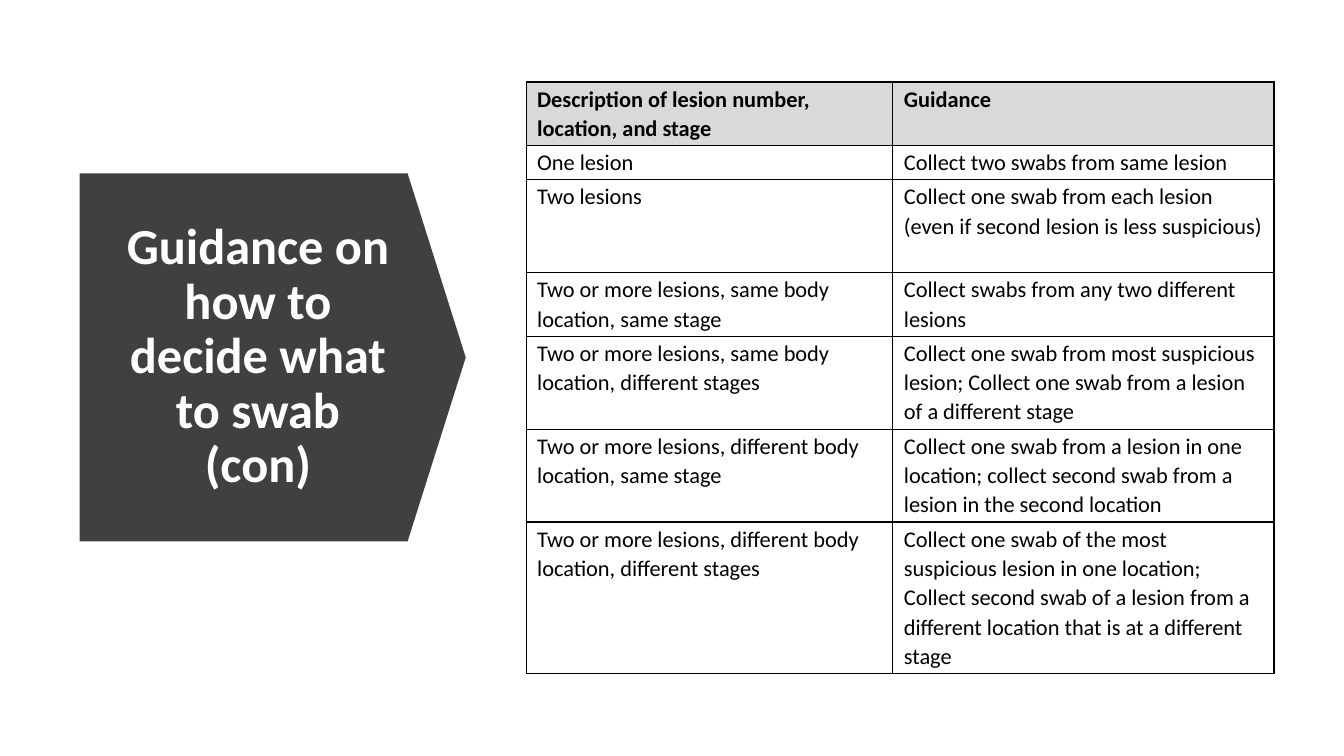
from lxml import etree
from pptx import Presentation
from pptx.dml.color import RGBColor
from pptx.enum.shapes import MSO_SHAPE
from pptx.enum.text import MSO_ANCHOR, PP_ALIGN
from pptx.oxml.ns import qn
from pptx.util import Pt

DOWN_ARROW = MSO_SHAPE.DOWN_ARROW
MIDDLE = MSO_ANCHOR.MIDDLE
LEFT, CENTER = PP_ALIGN.LEFT, PP_ALIGN.CENTER

TITLE = "Guidance on how to decide what to swab (con)"
ROWS = [
    (45.4, "Description of lesion number, location, and stage", "Guidance"),
    (24.4, "One lesion", "Collect two swabs from same lesion"),
    (66.4, "Two lesions",
     "Collect one swab from each lesion (even if second lesion is less suspicious)"),
    (45.4, "Two or more lesions, same body location, same stage",
     "Collect swabs from any two different lesions"),
    (66.4, "Two or more lesions, same body location, different stages",
     "Collect one swab from most suspicious lesion; "
     "Collect one swab from a lesion of a different stage"),
    (66.4, "Two or more lesions, different body location, same stage",
     "Collect one swab from a lesion in one location; "
     "collect second swab from a lesion in the second location"),
    (108, "Two or more lesions, different body location, different stages",
     "Collect one swab of the most suspicious lesion in one location; "
     "Collect second swab of a lesion from a different location "
     "that is at a different stage"),
]
COL_WIDTHS = [262, 272.2]


def rgb(value):
    return RGBColor.from_string(value)


def write(tf, text, size, color="000000", bold=False, align=LEFT, spacing=1.07, after=0):
    tf.word_wrap = True
    p = tf.paragraphs[0]
    p.alignment = align
    p.line_spacing = spacing
    p.space_after = Pt(after)
    r = p.add_run()
    r.text = text
    r.font.name = "Calibri"
    r.font.size = Pt(size)
    r.font.bold = bold
    r.font.color.rgb = rgb(color)


def add_borders(cell, color="000000", width=1):
    tcPr = cell._tc.get_or_add_tcPr()
    for i, side in enumerate(("a:lnL", "a:lnR", "a:lnT", "a:lnB")):
        ln = etree.Element(qn(side), w=str(Pt(width)))
        fill = etree.SubElement(ln, qn("a:solidFill"))
        etree.SubElement(fill, qn("a:srgbClr"), val=color)
        tcPr.insert(i, ln)


prs = Presentation()
prs.slide_width, prs.slide_height = Pt(960), Pt(540)
s = prs.slides.add_slide(prs.slide_layouts[6])

arrow = s.shapes.add_shape(DOWN_ARROW, Pt(63.4), Pt(117.4), Pt(262.8), Pt(275.8))
arrow.rotation = 270
arrow.adjustments[0] = 1
arrow.adjustments[1] = 0.158
arrow.shadow.inherit = False
arrow.fill.solid()
arrow.fill.fore_color.rgb = rgb("404040")
arrow.line.fill.background()

title = s.shapes.add_textbox(Pt(80.6), Pt(154.8), Pt(207.4), Pt(200.9))
title.text_frame.vertical_anchor = MIDDLE
write(title.text_frame, TITLE, 36, "FFFFFF", True, CENTER, 0.9, 6)

table = s.shapes.add_table(
    len(ROWS), len(COL_WIDTHS), Pt(375.8), Pt(58.6),
    Pt(sum(COL_WIDTHS)), Pt(sum(row[0] for row in ROWS))).table
table.horz_banding = False
for column, width in zip(table.columns, COL_WIDTHS):
    column.width = Pt(width)
for i, (height, *texts) in enumerate(ROWS):
    table.rows[i].height = Pt(height)
    for j, text in enumerate(texts):
        cell = table.cell(i, j)
        cell.margin_left = cell.margin_right = Pt(7.9)
        cell.margin_top, cell.margin_bottom = Pt(1.4), Pt(0)
        if i == 0:
            cell.fill.solid()
            cell.fill.fore_color.rgb = rgb("D9D9D9")
        else:
            cell.fill.background()
        add_borders(cell)
        write(cell.text_frame, text, 16, bold=i == 0)

prs.save("out.pptx")
